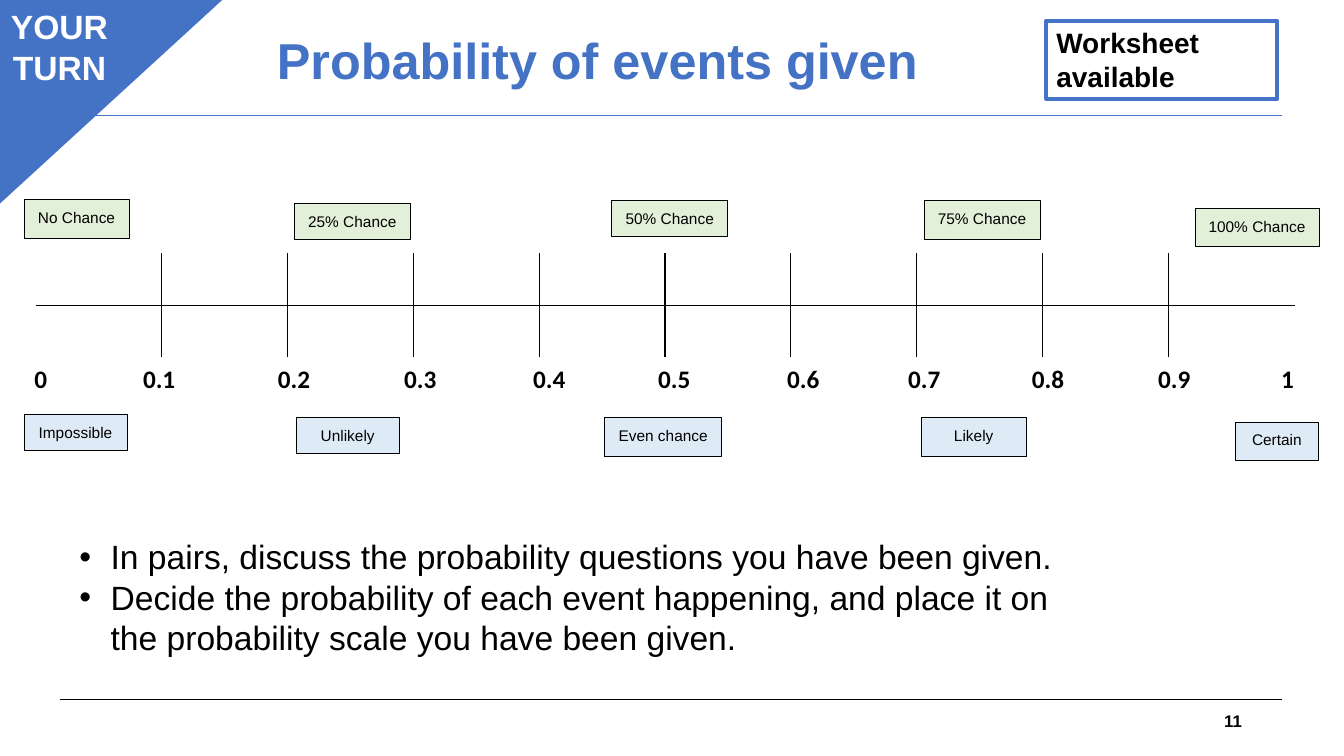
"""Build the slide with the probability scale."""
from dataclasses import dataclass

from lxml.etree import SubElement as Sub
from pptx import Presentation
from pptx.dml.color import RGBColor
from pptx.enum.shapes import MSO_CONNECTOR as Link, MSO_SHAPE as Kind
from pptx.enum.text import MSO_ANCHOR as Anchor, MSO_AUTO_SIZE as Auto, PP_ALIGN as Align
from pptx.oxml.ns import qn
from pptx.util import Cm, Pt

BLUE, BLACK, WHITE = "4472C4", "000000", "FFFFFF"
GREEN, PALE = "E2F0D9", "DEEBF7"


@dataclass
class Box:
    text: str
    left: float
    top: float
    width: float
    height: float
    fill: str


@dataclass
class Rule:
    top: float
    color: str


RULES = [Rule(17.63, BLACK), Rule(2.9, BLUE)]
BOXES = [
    Box("No Chance", 0.61, 5.03, 2.64, 0.97, GREEN),
    Box("25% Chance", 7.42, 5.13, 2.92, 0.91, GREEN),
    Box("50% Chance", 15.42, 5.05, 2.92, 0.91, GREEN),
    Box("75% Chance", 23.29, 5.05, 2.92, 0.99, GREEN),
    Box("100% Chance", 30.12, 5.26, 3.12, 0.94, GREEN),
    Box("Impossible", 0.61, 10.44, 2.59, 0.91, PALE),
    Box("Unlikely", 7.47, 10.52, 2.59, 0.91, PALE),
    Box("Even chance", 15.24, 10.52, 2.95, 0.97, PALE),
    Box("Likely", 23.22, 10.52, 2.64, 0.97, PALE),
    Box("Certain", 31.14, 10.64, 2.08, 0.97, PALE),
]
WIDTHS = [2.74, 3.4, 3.18, 3.25, 3.15, 3.25, 3.05, 3.12, 3.18, 4.95]
MARKS = ["0"] + [f"0.{n}" for n in range(1, 9)] + ["0.9\t1"]
TASKS = [
    "In pairs, discuss the probability questions you have been given.",
    "Decide the probability of each event happening, and place it on "
    "the probability scale you have been given.",
]


def paint(color: str) -> RGBColor:
    """Turn a hex string into a colour."""
    return RGBColor.from_string(color)


def write(frame, lines: list, size: float, color: str = BLACK, align=Align.LEFT,
          bold: bool = False, font: str = "Arial", **look) -> None:
    """Fill a text frame with styled paragraphs."""
    for name, value in {"word_wrap": True, **look}.items():
        setattr(frame, name, value)
    style = {"name": font, "size": Pt(size), "bold": bold}
    for spot, line in enumerate(lines):
        para = frame.add_paragraph() if spot else frame.paragraphs[0]
        para.text, para.alignment = line, align
        for run in para.runs:
            for name, value in style.items():
                setattr(run.font, name, value)
            run.font.color.rgb = paint(color)


def place(shape, left: float, top: float, width: float, height: float) -> None:
    """Set the place and size of a shape."""
    spot = {"left": left, "top": top, "width": width, "height": height}
    for name, value in spot.items():
        setattr(shape, name, Cm(value))


def panel(slide, kind, area: tuple, fill: str, edge: str, weight: float):
    """Add a flat shape; an empty fill leaves it clear."""
    shape = slide.shapes.add_shape(kind, *map(Cm, area))
    shape.shadow.inherit = False
    if fill:
        shape.fill.solid()
        shape.fill.fore_color.rgb = paint(fill)
    else:
        shape.fill.background()
    shape.line.color.rgb, shape.line.width = paint(edge), Pt(weight)
    return shape


def label(slide, box: Box) -> None:
    """Add one chance label."""
    area = (box.left, box.top, box.width, box.height)
    shape = panel(slide, Kind.RECTANGLE, area, box.fill, BLACK, 0.5)
    write(shape.text_frame, [box.text], 11, align=Align.CENTER,
          vertical_anchor=Anchor.TOP, margin_top=Cm(0.21))


def rule(slide, item: Rule) -> None:
    """Add one line across the slide."""
    line = slide.shapes.add_connector(
        Link.STRAIGHT, Cm(1.5), Cm(item.top), Cm(32.31), Cm(item.top))
    line.line.color.rgb, line.line.width = paint(item.color), Pt(0.75)
    Sub(line._element.spPr, qn("a:effectLst"))


def border(cell, sides: list, color: str) -> None:
    """Draw the named sides of a cell, in schema order."""
    props = cell._tc.get_or_add_tcPr()
    for side in sides:
        edge = Sub(props, qn(f"a:ln{side}"), w=str(Pt(1)))
        Sub(Sub(edge, qn("a:solidFill")), qn("a:srgbClr"), val=color)


def grid(slide, left: float, top: float, widths: list, tall: float):
    """Add a plain table of two rows."""
    table = slide.shapes.add_table(
        2, len(widths), Cm(left), Cm(top), Cm(sum(widths)), Cm(2 * tall)).table
    table.first_row = table.horz_banding = False
    for col, width in zip(table.columns, widths):
        col.width = Cm(width)
    for row in table.rows:
        row.height = Cm(tall)
    return table


def scale(slide) -> None:
    """Add the number line and its marks."""
    table = grid(slide, 0.91, 6.4, [3.17] * 10, 1.3)
    for y, row in enumerate(table.rows):
        for x, cell in enumerate(row.cells):
            inner = {"L": x > 0, "R": x < 9, "T": y == 1, "B": y == 0}
            for side, shown in inner.items():
                border(cell, [side], BLACK if shown else WHITE)
            cell.fill.background()
    table = grid(slide, 0.61, 9.07, WIDTHS, 1.07)
    for row in table.rows:
        for cell in row.cells:
            border(cell, ["L", "R", "T", "B"], WHITE)
            cell.fill.background()
    for cell, mark in zip(table.rows[0].cells, MARKS):
        write(cell.text_frame, [mark], 18, bold=True, font="Calibri")
    props = cell.text_frame.paragraphs[0]._p.get_or_add_pPr()
    Sub(Sub(props, qn("a:tabLst")), qn("a:tab"), pos=str(Cm(3.1)), algn="l")


def note(slide, area: tuple):
    """Add a text box and give its frame."""
    return slide.shapes.add_textbox(*map(Cm, area)).text_frame


def main() -> None:
    """Build and save the slide."""
    deck = Presentation()
    deck.slide_width, deck.slide_height = Cm(33.87), Cm(19.05)
    slide = deck.slides.add_slide(deck.slide_layouts[5])
    title = slide.shapes.title
    place(title, 4.29, 0.3, 21.54, 2.59)
    write(title.text_frame, ["Probability of events given"], 36, BLUE, Align.CENTER,
          True, auto_size=Auto.NONE, vertical_anchor=Anchor.MIDDLE)
    title.text_frame.paragraphs[0].line_spacing = 0.9
    for item in RULES:
        rule(slide, item)
    write(note(slide, (23.93, 17.65, 7.62, 1.02)), ["11"], 12, align=Align.RIGHT,
          bold=True, vertical_anchor=Anchor.MIDDLE)
    scale(slide)
    for box in BOXES:
        label(slide, box)
    corner = panel(slide, Kind.ISOSCELES_TRIANGLE, (-0.08, -0.15, 5.82, 5.33),
                   BLUE, BLUE, 1)
    corner.adjustments[0] = 0
    corner._element.spPr.xfrm.set("flipV", "1")
    turn = panel(slide, Kind.RECTANGLE, (0, 0.03, 3, 2.31), BLUE, BLUE, 0.75)
    write(turn.text_frame, ["YOUR", "TURN"], 24, WHITE, Align.CENTER, True,
          vertical_anchor=Anchor.TOP)
    tasks = note(slide, (1.75, 13.39, 25.96, 3.33))
    write(tasks, TASKS, 24)
    for para in tasks.paragraphs:
        props = para._p.get_or_add_pPr()
        props.set("marL", str(Cm(0.79)))
        props.set("indent", str(-Cm(0.79)))
        Sub(props, qn("a:buFont"), typeface="Arial")
        Sub(props, qn("a:buChar"), char="•")
    sheet = panel(slide, Kind.RECTANGLE, (26.37, 0.53, 5.82, 1.96), "", BLUE, 3)
    write(sheet.text_frame, ["Worksheet\vavailable"], 20, bold=True,
          vertical_anchor=Anchor.TOP)
    deck.save("out.pptx")


if __name__ == "__main__":
    main()
